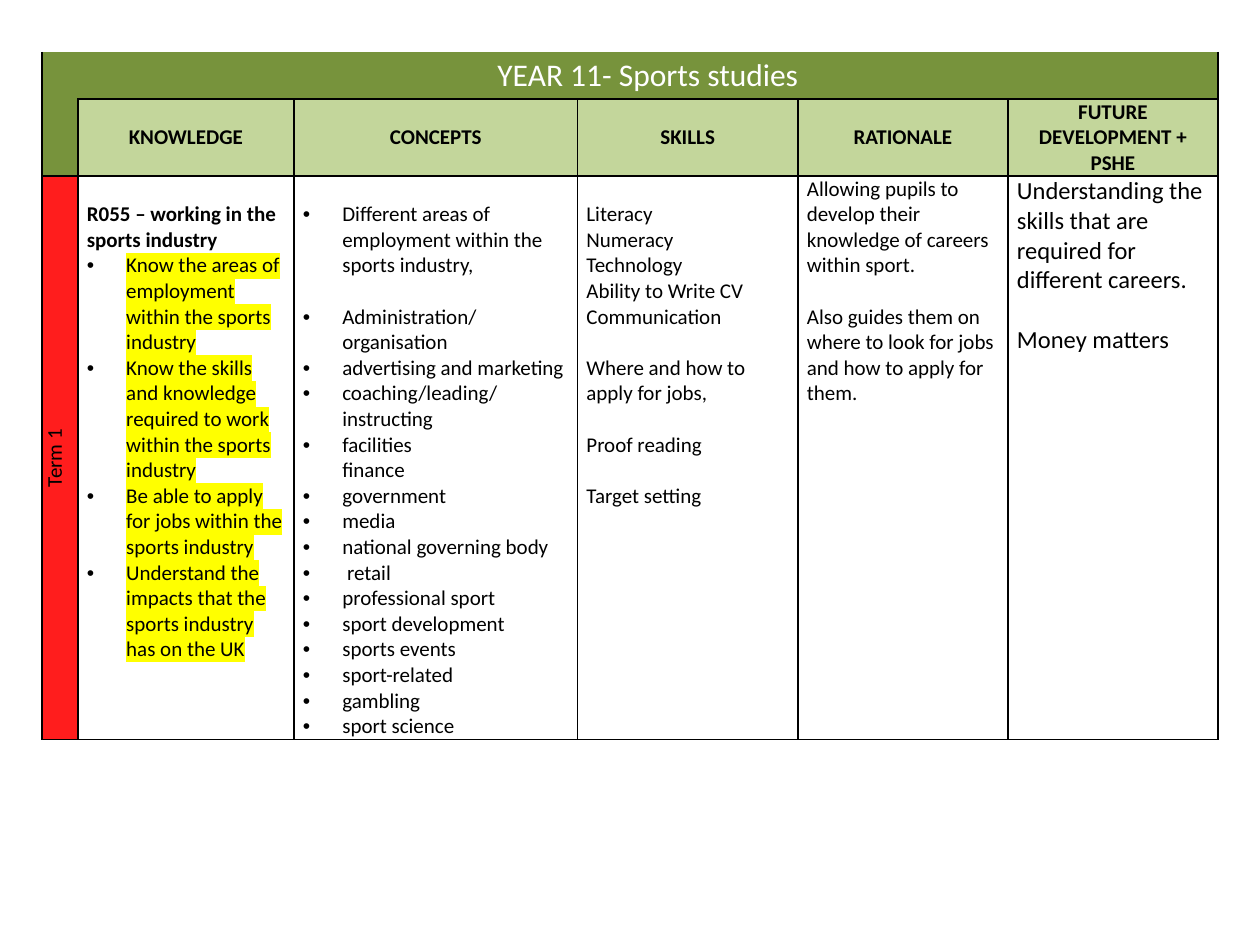
from dataclasses import dataclass

from lxml import etree
from pptx import Presentation
from pptx.dml.color import RGBColor
from pptx.enum.text import MSO_ANCHOR, PP_ALIGN
from pptx.oxml.ns import qn
from pptx.util import Pt

CENTER, LEFT = PP_ALIGN.CENTER, PP_ALIGN.LEFT
MIDDLE, TOP = MSO_ANCHOR.MIDDLE, MSO_ANCHOR.TOP
COLORS = {
    "title": "77933C",
    "header": "C3D69B",
    "term": "FF1D1D",
    "body": "FFFFFF",
    "text": "000000",
    "highlight": "FFFF00",
}
COLUMN_WIDTHS = [20.5, 123.5, 162, 126, 120, 120]
ROW_HEIGHTS = [27, 44, 322]
HEADERS = ["KNOWLEDGE", "CONCEPTS", "SKILLS", "RATIONALE", "FUTURE DEVELOPMENT + PSHE"]


@dataclass
class Line:
    """One paragraph; gap leaves an empty line's height after it."""
    text: str
    bullet: bool = False
    bold: bool = False
    highlight: bool = False
    gap: bool = False


KNOWLEDGE = [Line("R055 – working in the sports industry", bold=True)] + [
    Line(text, bullet=True, highlight=True)
    for text in (
        "Know the areas of employment within the sports industry",
        "Know the skills and knowledge required to work within the sports industry",
        "Be able to apply for jobs within the sports industry",
        "Understand the impacts that the sports industry has on the UK",
    )
]
CONCEPTS = [
    Line("Different areas of employment within the sports industry,", bullet=True, gap=True)
] + [
    Line(text, bullet=True)
    for text in (
        "Administration/organisation", "advertising and marketing",
        "coaching/leading/instructing", "facilities \vfinance", "government", "media",
        "national governing body", " retail", "professional sport", "sport development",
        "sports events", "sport-related", "gambling", "sport science",
    )
]
SKILLS = [
    Line("Literacy"),
    Line("Numeracy"),
    Line("Technology"),
    Line("Ability to Write CV"),
    Line("Communication", gap=True),
    Line("Where and how to apply for jobs,", gap=True),
    Line("Proof reading", gap=True),
    Line("Target setting"),
]
RATIONALE = [
    Line("Allowing pupils to develop their knowledge of careers within sport.", gap=True),
    Line("Also guides them on where to look for jobs and how to apply for them."),
]
FUTURE = [
    Line("Understanding the skills that are required for different careers.", gap=True),
    Line("Money matters"),
]


class CurriculumSlide:
    """Holds the text style and the slide, and draws the curriculum table."""

    font = "Calibri"
    margin = 5.15
    indent = 22.5
    line_height = 1.22

    def __init__(self, slide):
        self.slide = slide

    def add_table(self, left, top, widths, heights):
        shape = self.slide.shapes.add_table(
            len(heights), len(widths), Pt(left), Pt(top), Pt(sum(widths)), Pt(sum(heights)))
        self.table = shape.table
        self.table.first_row = self.table.horz_banding = False
        for column, width in zip(self.table.columns, widths):
            column.width = Pt(width)
        for row, height in zip(self.table.rows, heights):
            row.height = Pt(height)

    def add_borders(self, cell, hidden=""):
        properties = cell._tc.get_or_add_tcPr()
        for side in "LRTB":
            line = etree.SubElement(properties, qn(f"a:ln{side}"), w=str(Pt(1)))
            if side in hidden:
                etree.SubElement(line, qn("a:noFill"))
            else:
                fill = etree.SubElement(line, qn("a:solidFill"))
                etree.SubElement(fill, qn("a:srgbClr"), val=COLORS["text"])

    def fill_cell(self, row, column, fill, lines=(), size=12, color="text",
                  align=LEFT, anchor=TOP, top=0):
        cell = self.table.cell(row, column)
        cell.fill.solid()
        cell.fill.fore_color.rgb = RGBColor.from_string(COLORS[fill])
        cell.margin_left = cell.margin_right = Pt(self.margin)
        cell.margin_top, cell.margin_bottom = Pt(top), Pt(0)
        cell.vertical_anchor = anchor
        frame = cell.text_frame
        for index, line in enumerate(lines):
            paragraph = frame.add_paragraph() if index else frame.paragraphs[0]
            self.write_line(paragraph, line, size, color, align)
        return cell

    def write_line(self, paragraph, line, size, color, align):
        paragraph.text = line.text
        paragraph.alignment = align
        if line.gap:
            paragraph.space_after = Pt(round(size * self.line_height, 2))
        if line.bullet:
            self.add_bullet(paragraph)
        font = paragraph.font
        font.name, font.size, font.bold = self.font, Pt(size), line.bold
        font.color.rgb = RGBColor.from_string(COLORS[color])
        if line.highlight:
            for run in paragraph.runs:
                highlight = etree.SubElement(run._r.get_or_add_rPr(), qn("a:highlight"))
                etree.SubElement(highlight, qn("a:srgbClr"), val=COLORS["highlight"])

    def add_bullet(self, paragraph):
        properties = paragraph._p.get_or_add_pPr()
        properties.set("marL", str(Pt(self.indent)))
        properties.set("indent", str(-Pt(self.indent)))
        etree.SubElement(properties, qn("a:buFont"), typeface="Arial")
        etree.SubElement(properties, qn("a:buChar"), char="•")


def main():
    presentation = Presentation()
    presentation.slide_width, presentation.slide_height = Pt(720), Pt(540)
    page = CurriculumSlide(presentation.slides.add_slide(presentation.slide_layouts[6]))
    page.add_table(24, 29.7, COLUMN_WIDTHS, ROW_HEIGHTS)
    table = page.table

    hidden = {(0, 0): "RT", (1, 0): "T"}
    hidden.update({(0, column): "LT" for column in range(1, len(COLUMN_WIDTHS))})
    for row in range(len(ROW_HEIGHTS)):
        for column in range(len(COLUMN_WIDTHS)):
            page.add_borders(table.cell(row, column), hidden.get((row, column), ""))
    table.cell(0, 0).merge(table.cell(1, 0))
    table.cell(0, 1).merge(table.cell(0, 5))

    page.fill_cell(0, 0, "title")
    page.fill_cell(0, 1, "title", [Line("YEAR 11- Sports studies")], 18, "body", CENTER, MIDDLE)
    for column, header in enumerate(HEADERS, 1):
        page.fill_cell(1, column, "header", [Line(header, bold=True)],
                       align=CENTER, anchor=MIDDLE)
    term = page.fill_cell(2, 0, "term", [Line("Term 1")], align=CENTER, anchor=MIDDLE)
    term._tc.get_or_add_tcPr().set("vert", "vert270")

    bodies = [(KNOWLEDGE, 12, 14.6), (CONCEPTS, 12, 14.6), (SKILLS, 12, 14.6),
              (RATIONALE, 12, 0), (FUTURE, 14, 0)]
    for column, (lines, size, top) in enumerate(bodies, 1):
        page.fill_cell(2, column, "body", lines, size, top=top)
    presentation.save("out.pptx")


if __name__ == "__main__":
    main()
